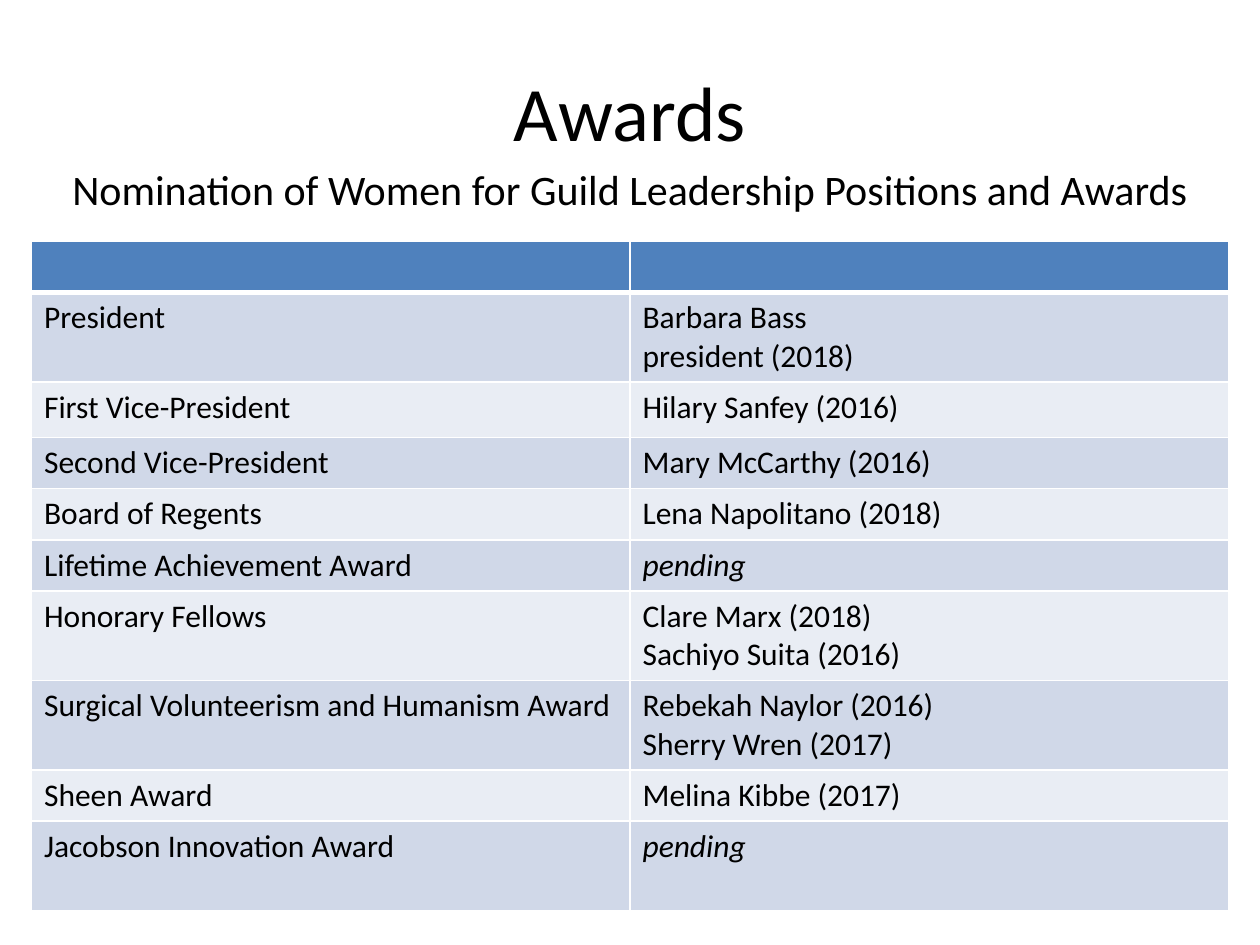
from lxml import etree
from pptx import Presentation
from pptx.dml.color import RGBColor
from pptx.enum.text import MSO_ANCHOR, PP_ALIGN
from pptx.oxml.ns import qn
from pptx.util import Pt

CENTER = PP_ALIGN.CENTER
MIDDLE = MSO_ANCHOR.MIDDLE
TOP = MSO_ANCHOR.TOP

BLACK = RGBColor(0x00, 0x00, 0x00)
WHITE = RGBColor(0xFF, 0xFF, 0xFF)
HEADER_BLUE = RGBColor(0x4F, 0x81, 0xBD)
BAND_DARK = RGBColor(0xD0, 0xD8, 0xE8)
BAND_LIGHT = RGBColor(0xE9, 0xED, 0xF4)

FONT = "Calibri"
SINGLE = 29.2
TALL = 31.7
DOUBLE = 51
PENDING = "pending"

AWARDS = [
    ("President", "Barbara Bass\npresident (2018)", DOUBLE),
    ("First Vice-President", "Hilary Sanfey (2016)", TALL),
    ("Second Vice-President", "Mary McCarthy (2016)", SINGLE),
    ("Board of Regents", "Lena Napolitano (2018)", SINGLE),
    ("Lifetime Achievement Award", PENDING, SINGLE),
    ("Honorary Fellows", "Clare Marx (2018)\nSachiyo Suita (2016)", DOUBLE),
    ("Surgical Volunteerism and Humanism Award",
     "Rebekah Naylor (2016)\nSherry Wren (2017)", DOUBLE),
    ("Sheen Award", "Melina Kibbe (2017)", SINGLE),
    ("Jacobson Innovation Award", PENDING, DOUBLE),
]


def style_paragraph(paragraph, size):
    paragraph.font.name = FONT
    paragraph.font.size = Pt(size)
    paragraph.font.color.rgb = BLACK


def fill_placeholder(shape, text, size, anchor, left, top, width, height):
    shape.left, shape.top = Pt(left), Pt(top)
    shape.width, shape.height = Pt(width), Pt(height)
    shape.text_frame.text = text
    shape.text_frame.vertical_anchor = anchor
    paragraph = shape.text_frame.paragraphs[0]
    paragraph.alignment = CENTER
    style_paragraph(paragraph, size)
    return paragraph


def remove_bullet(paragraph):
    properties = paragraph._p.get_or_add_pPr()
    properties.set("marL", "0")
    properties.set("indent", "0")
    etree.SubElement(properties, qn("a:buNone"))


def add_borders(cell, top_width, bottom_width):
    properties = cell._tc.get_or_add_tcPr()
    widths = {"a:lnL": 1, "a:lnR": 1, "a:lnT": top_width, "a:lnB": bottom_width}
    for tag, width in widths.items():
        line = etree.SubElement(properties, qn(tag), w=str(Pt(width)))
        fill = etree.SubElement(line, qn("a:solidFill"))
        etree.SubElement(fill, qn("a:srgbClr"), val=str(WHITE))


def fill_cell(cell, text, color, top_width=1, bottom_width=1):
    add_borders(cell, top_width, bottom_width)
    cell.fill.solid()
    cell.fill.fore_color.rgb = color
    cell.text = text
    for paragraph in cell.text_frame.paragraphs:
        style_paragraph(paragraph, 18)
        if text == PENDING:
            paragraph.font.italic = True


def add_awards_table(slide, left, top, width):
    heights = [SINGLE] + [height for _, _, height in AWARDS]
    frame = slide.shapes.add_table(
        len(heights), 2, Pt(left), Pt(top), Pt(width), Pt(sum(heights)))
    table = frame.table
    for row, height in zip(table.rows, heights):
        row.height = Pt(height)
    for cell in table.rows[0].cells:
        fill_cell(cell, "", HEADER_BLUE, bottom_width=3)
    for index, (award, holders, _) in enumerate(AWARDS, start=1):
        color = BAND_DARK if index % 2 else BAND_LIGHT
        top_width = 3 if index == 1 else 1
        for column, text in enumerate((award, holders)):
            fill_cell(table.cell(index, column), text, color, top_width)


def main():
    presentation = Presentation()
    presentation.slide_width, presentation.slide_height = Pt(720), Pt(540)
    slide = presentation.slides.add_slide(presentation.slide_layouts[1])
    fill_placeholder(slide.shapes.title, "Awards", 44, MIDDLE, 36, 18, 648, 90)
    subtitle = fill_placeholder(
        slide.placeholders[1],
        "Nomination of Women for Guild Leadership Positions and Awards",
        24, TOP, 0, 90, 720, 348)
    remove_bullet(subtitle)
    add_awards_table(slide, 18, 138, 684)
    presentation.save("out.pptx")


if __name__ == "__main__":
    main()
